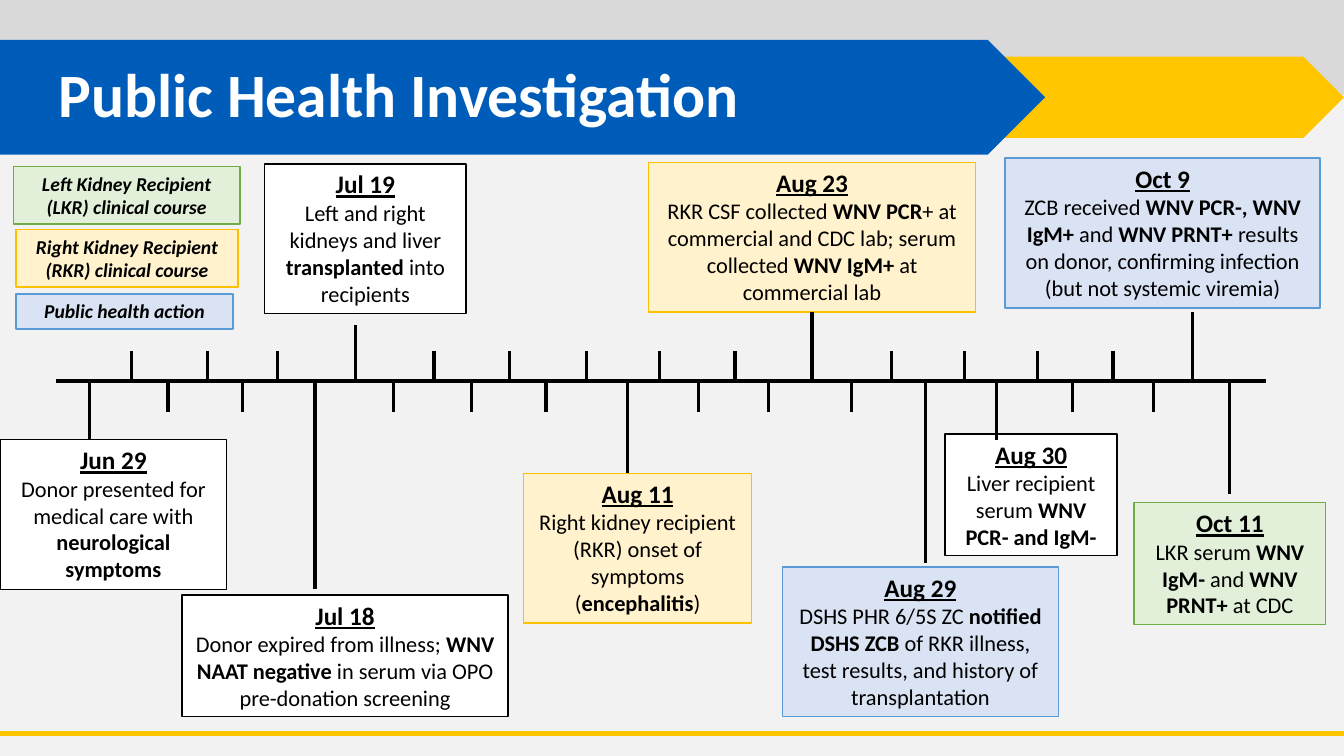
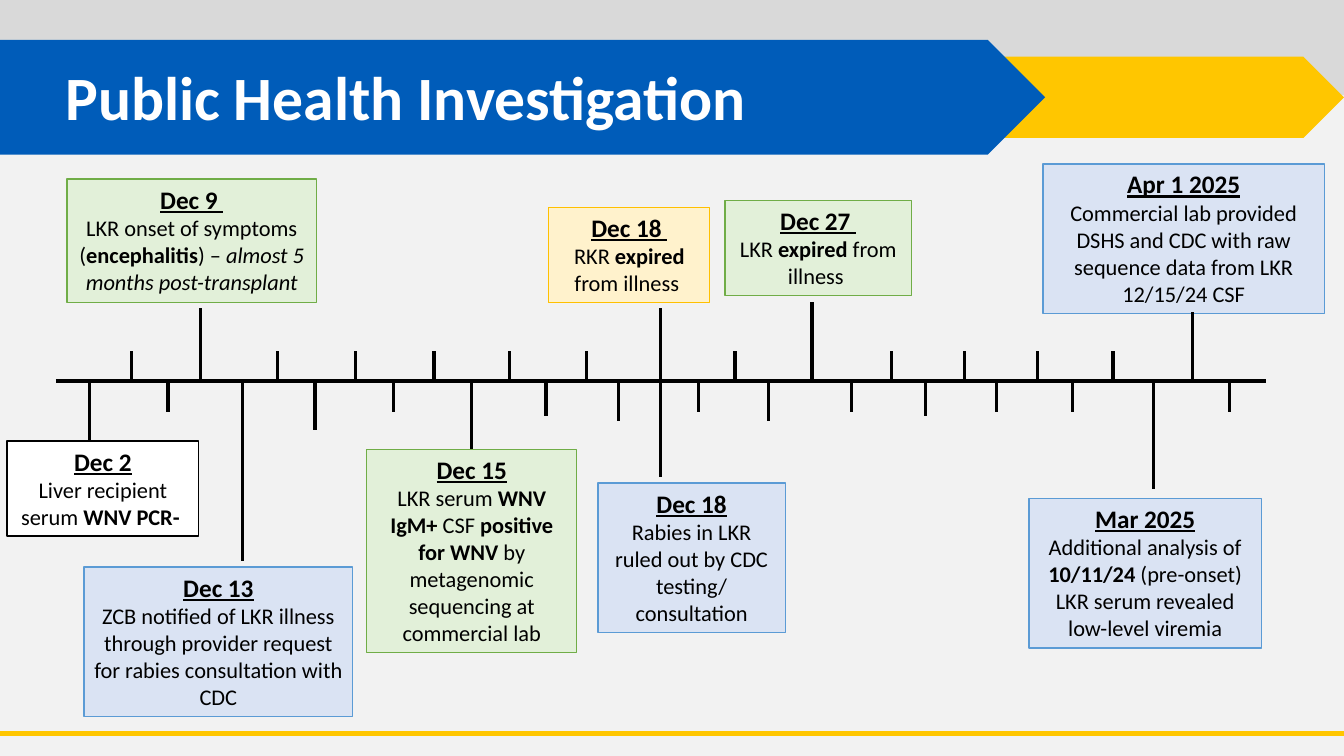
from dataclasses import dataclass
from typing import Optional

from lxml.etree import SubElement
from pptx import Presentation
from pptx.dml.color import RGBColor
from pptx.enum.shapes import MSO_CONNECTOR as CONNECTOR, MSO_SHAPE as SHAPE
from pptx.enum.text import MSO_ANCHOR as ANCHOR, MSO_AUTO_SIZE as AUTO_SIZE, PP_ALIGN as ALIGN
from pptx.oxml.ns import qn
from pptx.util import Pt

WIDTH, HEIGHT = 960, 540
FONT = "Calibri"
COLORS = {
    "background": "F2F2F2", "band": "D9D9D9", "blue": "005CB9", "gold": "FFC600",
    "white": "FFFFFF", "black": "000000",
}
KINDS = {
    "general": ("FFFFFF", "000000"),
    "left kidney": ("E2F0D9", "70AD47"),
    "right kidney": ("FFF2CC", "FFC000"),
    "action": ("DAE3F3", "5B9BD5"),
}

AXIS_LEFT, AXIS_RIGHT, AXIS_Y = 40, 904, 272
UPPER_END, LOWER_END = 250.5, 294
UPPER_TICKS = [94, 148, 198, 254, 310, 364, 419, 471, 525, 580, 637, 689, 741, 795, 852]
LOWER_TICKS = [64, 120, 173, 225, 281, 337, 390, 442, 499, 549, 608, 661, 712, 766, 824, 878]


@dataclass
class Event:
    date: str
    body: str
    kind: str
    box: tuple
    reach: float
    slot: Optional[int] = None
    stem_x: Optional[float] = None
    italic_tail: str = ""

    @property
    def above(self):
        return self.reach < AXIS_Y

    @property
    def x(self):
        if self.stem_x is not None:
            return self.stem_x
        return (UPPER_TICKS if self.above else LOWER_TICKS)[self.slot]


LEGEND = [
    ("Left Kidney Recipient (LKR) clinical course", "left kidney", (9.5, 119, 162, 41)),
    ("Right Kidney Recipient (RKR) clinical course", "right kidney", (11.5, 164, 158.5, 41)),
    ("Public health action", "action", (11.5, 210, 155, 25)),
]

EVENTS_TO_OCTOBER = [
    Event("Jun 29", "Donor presented for medical care with |neurological symptoms",
          "general", (0, 314, 162, 107), 314, 0),
    Event("Jul 18", "Donor expired from illness; |WNV NAAT negative| in serum via OPO "
          "pre-donation screening", "general", (130, 425, 233, 87), 420.5, 3),
    Event("Jul 19", "Left and right kidneys and liver |transplanted| into recipients",
          "general", (189, 117, 144, 107), 232.5, 3),
    Event("Aug 11", "Right kidney recipient (RKR) onset of symptoms (|encephalitis|)",
          "right kidney", (374, 338, 163, 107), 338, 7, stem_x=448),
    Event("Aug 23", "RKR CSF collected |WNV PCR|+ at commercial and CDC lab; serum collected "
          "|WNV IgM+| at commercial lab", "right kidney", (463, 116, 234, 107), 223, 9),
    Event("Oct 11", "LKR serum |WNV IgM-| and |WNV PRNT+ |at CDC",
          "left kidney", (810, 359, 137, 87), 353, 15),
    Event("Aug 30", "Liver recipient serum |WNV PCR- and IgM-",
          "general", (675, 310, 123, 87), 314, 12),
    Event("Aug 29", "DSHS PHR 6/5S ZC |notified DSHS ZCB |of RKR illness, test results, "
          "and history of transplantation", "action", (559, 405, 197, 107), 402, 11),
    Event("Oct 9", "ZCB received |WNV PCR-, WNV IgM+ |and| WNV PRNT+ |results on donor, "
          "confirming infection (but not systemic viremia)",
          "action", (718, 113, 225, 107), 223, 14),
]

EVENTS_FROM_DECEMBER = [
    Event("Dec 2", "Liver recipient serum |WNV PCR- ", "general", (5, 315, 137, 68), 314, 0),
    Event("Dec 15", "LKR serum |WNV IgM+ |CSF |positive for WNV |by metagenomic sequencing "
          "at commercial lab", "left kidney", (262, 321, 150, 145), 321, 5),
    Event("Dec 9 ", "LKR onset of symptoms (|encephalitis|) – ", "left kidney",
          (48, 128, 178, 88), 220, 1, stem_x=143,
          italic_tail="almost 5 months post-transplant"),
    Event("Mar 2025", "Additional analysis of |10/11/24| (pre-onset) LKR serum revealed "
          "low-level viremia", "action", (735, 356, 166, 107), 349, 14),
    Event("Dec 18 ", "RKR |expired| from illness ", "right kidney",
          (392, 148, 115, 68), 220, 7, stem_x=472),
    Event("Dec 27 ", "LKR |expired| from illness ", "left kidney",
          (518, 143, 133, 68), 216, 9),
    Event("Dec 13", "ZCB notified of LKR illness through provider request for rabies "
          "consultation with CDC", "action", (60, 405, 192, 107), 401, 2),
    Event("Dec 18", "Rabies in LKR ruled out by CDC testing/ consultation", "action",
          (427, 345, 134, 107), 341, stem_x=472),
    Event("Apr 1 2025", "Commercial lab provided DSHS and CDC with raw sequence data from LKR "
          "12/15/24 CSF", "action", (745, 117, 201, 107), 223, 14),
]


def rgb(color):
    return RGBColor.from_string(COLORS.get(color, color))


def points(*values):
    return [Pt(value) for value in values]


def write(paragraph, text, size=16, color="black", bold=False, italic=False, underline=False):
    run = paragraph.add_run()
    run.text = text
    font = run.font
    font.name, font.size = FONT, Pt(size)
    font.bold, font.italic, font.underline = bold, italic, underline
    font.color.rgb = rgb(color)


def add_line(slide, start, end, color="black", weight=2.25):
    line = slide.shapes.add_connector(CONNECTOR.STRAIGHT, *points(*start, *end))
    line.line.color.rgb = rgb(color)
    line.line.width = Pt(weight)
    SubElement(line.element.spPr, qn("a:effectLst"))
    return line


def add_band(slide, preset, box, color):
    band = slide.shapes.add_shape(preset, *points(*box))
    band.shadow.inherit = False
    band.fill.solid()
    band.fill.fore_color.rgb = rgb(color)
    band.line.fill.background()
    return band


def add_box(slide, kind, box):
    shape = slide.shapes.add_textbox(*points(*box))
    fill, outline = KINDS[kind]
    shape.fill.solid()
    shape.fill.fore_color.rgb = rgb(fill)
    shape.line.color.rgb = rgb(outline)
    shape.line.width = Pt(1)
    frame = shape.text_frame
    frame.word_wrap = True
    frame.auto_size = AUTO_SIZE.SHAPE_TO_FIT_TEXT
    frame.paragraphs[0].alignment = ALIGN.CENTER
    return shape


def decorate_layout(layout, slide):
    layout.background.fill.solid()
    layout.background.fill.fore_color.rgb = rgb("background")
    decorations = [
        add_band(slide, SHAPE.RECTANGLE, (0, 0, WIDTH, 68), "band"),
        add_band(slide, SHAPE.PENTAGON, (510, 40.5, 450, 58), "gold"),
        add_band(slide, SHAPE.PENTAGON, (0, 28.5, 746.5, 82), "blue"),
        add_line(slide, (0, 524), (WIDTH, 524), "gold", 3),
    ]
    for index, shape in enumerate(decorations, start=2):
        layout.shapes.element.insert(index, shape.element)


def add_title(slide, text, left, top):
    title = slide.shapes.title
    title.left, title.top, title.width, title.height = points(left, top, 828, 104)
    frame = title.text_frame
    frame.word_wrap = True
    frame.auto_size = AUTO_SIZE.NONE
    frame.vertical_anchor = ANCHOR.MIDDLE
    paragraph = frame.paragraphs[0]
    paragraph.alignment = ALIGN.LEFT
    paragraph.line_spacing = 0.9
    write(paragraph, text, size=44, color="white", bold=True)


def add_legend(slide):
    for text, kind, box in LEGEND:
        shape = add_box(slide, kind, box)
        write(shape.text_frame.paragraphs[0], text, size=14, bold=True, italic=True)


def add_axis(slide, events, long_ticks):
    add_line(slide, (AXIS_LEFT, AXIS_Y), (AXIS_RIGHT, AXIS_Y), weight=3)
    taken = {(event.above, event.slot) for event in events}
    for above, ticks, default_end in ((True, UPPER_TICKS, UPPER_END),
                                      (False, LOWER_TICKS, LOWER_END)):
        for slot, x in enumerate(ticks):
            if (above, slot) not in taken:
                end = default_end if above else long_ticks.get(slot, default_end)
                add_line(slide, (x, AXIS_Y), (x, end))


def add_event(slide, event):
    shape = add_box(slide, event.kind, event.box)
    frame = shape.text_frame
    write(frame.paragraphs[0], event.date, size=18, bold=True, underline=True)
    paragraph = frame.add_paragraph()
    paragraph.alignment = ALIGN.CENTER
    for index, piece in enumerate(event.body.split("|")):
        if piece:
            write(paragraph, piece, bold=index % 2 == 1)
    if event.italic_tail:
        write(paragraph, event.italic_tail, italic=True)

    stem = add_line(slide, (event.x, AXIS_Y), (event.x, event.reach))
    left, top, width, height = event.box
    facing_edge, side = (top + height, 2) if event.above else (top, 0)
    if event.x == left + width / 2 and event.reach == facing_edge:
        stem.end_connect(shape, side)


def add_timeline(slide, events, long_ticks):
    add_axis(slide, events, long_ticks)
    for event in events:
        add_event(slide, event)


def main():
    presentation = Presentation()
    presentation.slide_width, presentation.slide_height = points(WIDTH, HEIGHT)
    layout = presentation.slide_layouts[5]

    first = presentation.slides.add_slide(layout)
    decorate_layout(layout, first)
    add_title(first, "Public Health Investigation", 34.5, 18)
    add_timeline(first, EVENTS_TO_OCTOBER, {})
    add_legend(first)

    second = presentation.slides.add_slide(layout)
    add_title(second, "Public Health Investigation", 39.5, 20)
    add_timeline(second, EVENTS_FROM_DECEMBER, {3: 307, 6: 297, 7: 301, 9: 301, 11: 297})

    presentation.save("out.pptx")


if __name__ == "__main__":
    main()
